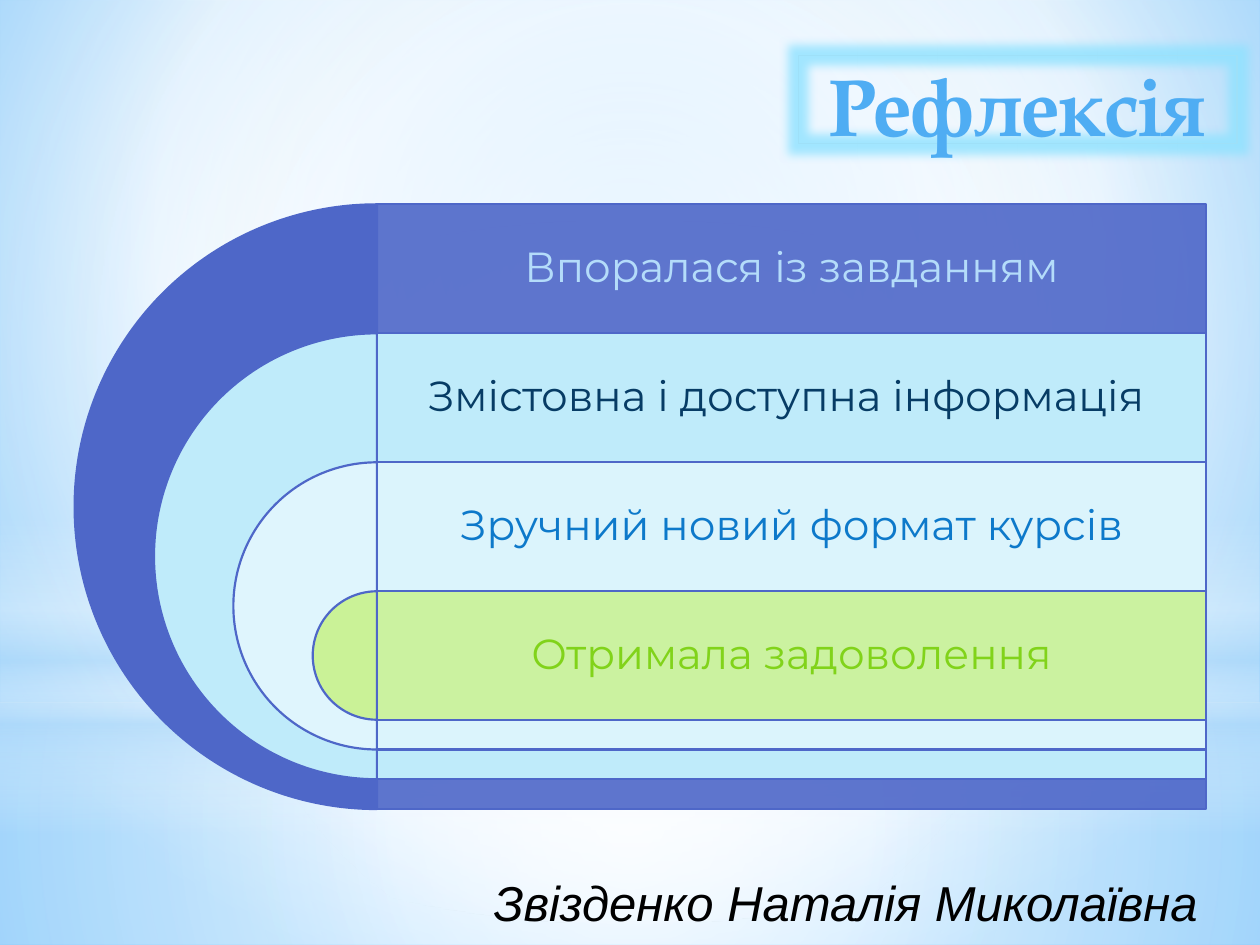
from dataclasses import dataclass

from lxml.etree import SubElement
from pptx import Presentation
from pptx.dml.color import RGBColor
from pptx.enum.shapes import MSO_SHAPE
from pptx.enum.text import MSO_ANCHOR, MSO_AUTO_SIZE, PP_ALIGN
from pptx.oxml import parse_xml
from pptx.oxml.ns import nsdecls, qn
from pptx.util import Cm, Pt


@dataclass(frozen=True)
class Theme:
    white: str = "FFFFFF"
    haze: str = "B4DCFA"
    sky_corner: str = "9ED5FF"
    sky_edge: str = "5BB9FF"
    outline: str = "4E67C8"
    title: str = "4FADF3"
    title_frame: str = "9EE0F8"
    glow: str = "8FE2FF"
    author: str = "000000"
    title_size: float = 46
    band_size: float = 24
    author_size: float = 28


theme = Theme()


def write(frame, text, *, size, font, color, align=PP_ALIGN.LEFT, anchor=MSO_ANCHOR.TOP,
          bold=False, italic=False, wrap=True, spacing=1.0, margins=(0.25, 0.13)):
    frame.word_wrap = wrap
    frame.auto_size = MSO_AUTO_SIZE.NONE if wrap else MSO_AUTO_SIZE.SHAPE_TO_FIT_TEXT
    frame.vertical_anchor = anchor
    frame.margin_left = frame.margin_right = Cm(margins[0])
    frame.margin_top = frame.margin_bottom = Cm(margins[1])
    paragraph = frame.paragraphs[0]
    paragraph.alignment = align
    paragraph.line_spacing = spacing
    run = paragraph.add_run()
    run.text = text
    run.font.size, run.font.name = Pt(size), font
    run.font.bold, run.font.italic = bold, italic
    run.font.color.rgb = RGBColor.from_string(color)


def set_gradient(fill, element, stops, direction):
    """Replace the fill with (position, colour, opacity) stops, all in percent."""
    fill.gradient()
    gradient = element.xpath(".//a:gradFill")[0]
    stop_xml = "".join(
        f'<a:gs pos="{position * 1000}"><a:srgbClr val="{color}">'
        f'<a:alpha val="{opacity * 1000}"/></a:srgbClr></a:gs>'
        for position, color, opacity in stops)
    gradient.getparent().replace(gradient, parse_xml(
        f'<a:gradFill {nsdecls("a")} rotWithShape="1"><a:gsLst>{stop_xml}</a:gsLst>'
        f'{direction}</a:gradFill>'))


presentation = Presentation()
presentation.slide_width, presentation.slide_height = Cm(25.4), Cm(19.05)
slide = presentation.slides.add_slide(presentation.slide_layouts[5])

# Sky background and its soft layers of light
radial = ('<a:path path="circle"><a:fillToRect l="50000" t="50000" r="50000" b="50000"/>'
          '</a:path>')
off_centre = ('<a:path path="circle"><a:fillToRect l="20000" t="10000" r="20000" b="60000"/>'
              '</a:path>')
downward = '<a:lin ang="5400000" scaled="0"/>'
set_gradient(slide.background.fill, slide.element,
             [(0, theme.sky_corner, 100), (60, theme.white, 100), (100, theme.sky_edge, 100)],
             off_centre)

light_layers = [
    (MSO_SHAPE.RECTANGLE, 14.17, 4.88, radial,
     [(0, theme.white, 91), (37, theme.white, 76), (100, theme.haze, 79)]),
    (MSO_SHAPE.RECTANGLE, 0, 14.17, radial,
     [(0, theme.white, 89), (48, theme.white, 62), (100, theme.haze, 79)]),
    (MSO_SHAPE.RECTANGLE, 10.46, 6.35, downward,
     [(0, theme.white, 0), (29, theme.white, 30), (45, theme.haze, 40),
      (55, theme.white, 26), (65, theme.haze, 60), (100, theme.white, 0)]),
    (MSO_SHAPE.OVAL, 4.45, 14.17, radial,
     [(0, theme.white, 100), (56, theme.white, 0)]),
]
for kind, top, height, direction, stops in light_layers:
    layer = slide.shapes.add_shape(kind, 0, Cm(top), Cm(25.4), Cm(height))
    layer.shadow.inherit = False
    layer.line.fill.background()
    set_gradient(layer.fill, layer.element, stops, direction)

# Title with a glowing frame, in front of the light layers
title = slide.shapes.title
title.element.getparent().append(title.element)
title.left, title.top, title.width, title.height = Cm(16.1), Cm(1.12), Cm(8.84), Cm(1.78)
title.line.color.rgb = RGBColor.from_string(theme.title_frame)
title.line.width = Pt(0.75)
title.element.spPr.append(parse_xml(
    f'<a:effectLst {nsdecls("a")}><a:glow rad="139700"><a:srgbClr val="{theme.glow}">'
    '<a:alpha val="80000"/></a:srgbClr></a:glow></a:effectLst>'))
write(title.text_frame, "Рефлексія ", size=theme.title_size, font="TeX Gyre Pagella",
      color=theme.title, align=PP_ALIGN.RIGHT, bold=True, margins=(0.25, 0))

# Nested bands: each half disc continues to the right as a rectangle
bands = [
    ("Впоралася із завданням", "4E67C8", 90, "B4DCFA"),
    ("Змістовна і доступна інформація ", "BFEBFA", 100, "073C65"),
    ("Зручний новий формат курсів", "DFF5FD", 90, "0D79CA"),
    ("Отримала задоволення", "CAF297", 90, "81D31A"),
]
axis, first_top, band_width, band_height = 7.6, 4.12, 16.71, 2.6
largest, shrink = 12.19, 3.2
diagram = slide.shapes.add_group_shape().shapes
for index, (text, fill_color, opacity, text_color) in enumerate(bands):
    top = first_top + index * band_height
    diameter = largest - index * shrink
    half_disc = diagram.add_shape(MSO_SHAPE.PIE, Cm(axis - diameter / 2), Cm(top),
                                  Cm(diameter), Cm(diameter))
    half_disc.adjustments[0], half_disc.adjustments[1] = 54, 162
    bar = diagram.add_shape(MSO_SHAPE.RECTANGLE, Cm(axis), Cm(top),
                            Cm(band_width), Cm(diameter))
    for shape in (half_disc, bar):
        shape.shadow.inherit = False
        shape.fill.solid()
        shape.fill.fore_color.rgb = RGBColor.from_string(fill_color)
        shape.line.color.rgb = RGBColor.from_string(theme.outline)
        shape.line.width = Pt(1.25)
    bar_color = bar.element.spPr.find(qn("a:solidFill")).find(qn("a:srgbClr"))
    SubElement(bar_color, qn("a:alpha"), val=str(opacity * 1000))
    label = diagram.add_textbox(Cm(axis), Cm(top), Cm(band_width), Cm(band_height))
    write(label.text_frame, text, size=theme.band_size, font="Montserrat", color=text_color,
          align=PP_ALIGN.CENTER, anchor=MSO_ANCHOR.MIDDLE, spacing=0.9, margins=(0.25, 0.25))

author = slide.shapes.add_textbox(Cm(9.7), Cm(17.45), Cm(14.88), Cm(1.45))
write(author.text_frame, "Звізденко Наталія Миколаївна", size=theme.author_size,
      font="Arial", color=theme.author, italic=True, wrap=False)

presentation.save("out.pptx")
